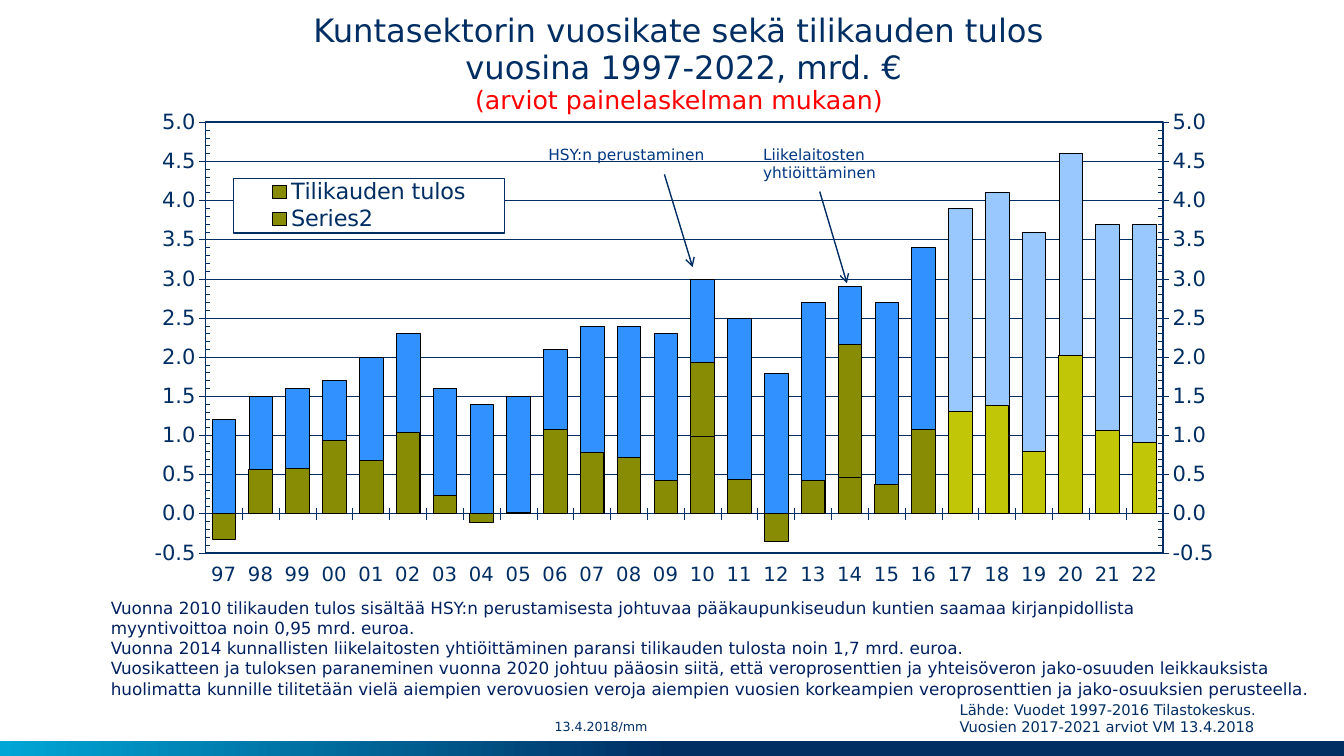
from copy import deepcopy
from lxml import etree
from pptx import Presentation
from pptx.chart.data import CategoryChartData
from pptx.dml.color import RGBColor
from pptx.enum.chart import XL_CHART_TYPE, XL_LEGEND_POSITION, XL_TICK_LABEL_POSITION, XL_TICK_MARK
from pptx.enum.dml import MSO_LINE
from pptx.enum.shapes import MSO_CONNECTOR, MSO_SHAPE
from pptx.enum.text import MSO_ANCHOR, MSO_AUTO_SIZE, PP_ALIGN
from pptx.oxml import parse_xml
from pptx.oxml.ns import qn
from pptx.util import Inches, Pt

NAVY = "002E63"
FONT = "DejaVu Sans"
NS = ('xmlns:c="http://schemas.openxmlformats.org/drawingml/2006/chart" '
      'xmlns:a="http://schemas.openxmlformats.org/drawingml/2006/main"')


def rgb(code):
    return RGBColor.from_string(code)


def write(shape, lines, wrap=True, inset=0.1, align=PP_ALIGN.LEFT, spacing=None):
    """Fill a shape with one paragraph per (text, size, colour) line."""
    frame = shape.text_frame
    frame.word_wrap = wrap
    frame.auto_size = MSO_AUTO_SIZE.SHAPE_TO_FIT_TEXT
    frame.vertical_anchor = MSO_ANCHOR.TOP
    frame.margin_left = frame.margin_right = Inches(inset)
    frame.margin_top = frame.margin_bottom = Inches(inset / 2)
    for i, (text, size, color) in enumerate(lines):
        para = frame.paragraphs[0] if i == 0 else frame.add_paragraph()
        para.alignment = align
        para.line_spacing = spacing
        run = para.add_run()
        run.text = text
        run.font.size = Pt(size)
        run.font.name = FONT
        run.font.color.rgb = rgb(color)


prs = Presentation()
prs.slide_width, prs.slide_height = Inches(13.33), Inches(7.5)
slide = prs.slides.add_slide(prs.slide_layouts[5])
shapes = slide.shapes

# Bottom band
band = shapes.add_shape(MSO_SHAPE.RECTANGLE, 0, Inches(7.35), Inches(13.33), Inches(0.15))
band.shadow.inherit = False
band.line.fill.background()
band.fill.gradient()
band.fill.gradient_angle = 180
for stop, (pos, color) in zip(band.fill.gradient_stops, [(0.5, NAVY), (1, "00A6D6")]):
    stop.position = pos
    stop.color.rgb = rgb(color)

# Chart data
years = [f"{year % 100:02d}" for year in range(1997, 2023)]
margin = [1.2, 1.5, 1.6, 1.7, 2, 2.3, 1.6, 1.4, 1.5, 2.1, 2.4, 2.4, 2.3, 3, 2.5, 1.8,
          2.7, 2.9, 2.7, 3.4, 3.9, 4.1, 3.6, 4.6, 3.7, 3.7]
result = [-0.33, 0.57, 0.58, 0.94, 0.68, 1.04, 0.23, -0.11, 0.01, 1.08, 0.78, 0.72, 0.43,
          0.98, 0.44, -0.36, 0.43, 0.46, 0.37, 1.08, 1.31, 1.38, 0.8, 2.02, 1.06, 0.91]
extra = [{"10": 0.95, "14": 1.7}.get(year) for year in years]
data = CategoryChartData()
data.categories = years
data.add_series("Vuosikate", margin)
data.add_series("", result)
data.add_series("Tilikauden tulos", extra)
chart = shapes.add_chart(XL_CHART_TYPE.COLUMN_CLUSTERED, Inches(1.39), Inches(0.68),
                         Inches(10.79), Inches(5.28), data).chart
chart.has_title = False
chart.font.name = FONT
chart.font.size = Pt(15)
chart.font.color.rgb = rgb(NAVY)

# Columns, with the forecast years in lighter shades
plot = chart.plots[0]
plot.gap_width = 56
plot.vary_by_categories = False
looks = [("3191FF", "98C8FF", 0.25), ("888C04", "C1C606", 0.5), ("888C04", None, 0.5)]
for series, (color, light, width) in zip(plot.series, looks):
    formats = [(series.format, color)]
    if light:
        formats += [(series.points[i].format, light) for i in range(20, 26)]
    for form, shade in formats:
        form.fill.solid()
        form.fill.fore_color.rgb = rgb(shade)
        form.line.color.rgb = rgb("000000")
        form.line.width = Pt(width)
    series.invert_if_negative = False

# Axes
cat, val = chart.category_axis, chart.value_axis
for axis, size in [(cat, 14), (val, 15)]:
    axis.major_tick_mark = XL_TICK_MARK.CROSS
    axis.tick_labels.font.size = Pt(size)
    axis.tick_labels.font.name = FONT
    axis.tick_labels.font.bold = False
    axis.tick_labels.font.color.rgb = rgb(NAVY)
    axis.format.line.color.rgb = rgb(NAVY)
    axis.format.line.width = Pt(0.3)
cat.tick_label_position = XL_TICK_LABEL_POSITION.LOW
val.minimum_scale, val.maximum_scale = -0.5, 5
val.major_unit, val.minor_unit = 0.5, 0.1
val.minor_tick_mark = XL_TICK_MARK.INSIDE
val.tick_labels.number_format = "0.0"
val.tick_labels.number_format_is_linked = False
grid = val.major_gridlines.format.line
grid.color.rgb = rgb(NAVY)
grid.width = Pt(0.25)
grid.dash_style = MSO_LINE.ROUND_DOT

# Legend
chart.has_legend = True
legend = chart.legend
legend.position = XL_LEGEND_POSITION.RIGHT
legend.include_in_layout = False
legend.font.size = Pt(16)
legend.font.name = FONT
legend.font.bold = False
legend.font.color.rgb = rgb(NAVY)

# Result series go to a stacked group on the right axis
area = chart._chartSpace.find(".//" + qn("c:plotArea"))
bars = area.find(qn("c:barChart"))
stack = deepcopy(bars)
bars.addnext(stack)
for ser in bars.findall(qn("c:ser"))[1:]:
    bars.remove(ser)
stack.remove(stack.find(qn("c:ser")))
stack.find(qn("c:grouping")).set("val", "stacked")
chart.plots[1].overlap = 100
unnamed = stack.find(qn("c:ser"))
unnamed.remove(unnamed.find(qn("c:tx")))
left = area.find(qn("c:valAx"))
right, hidden = deepcopy(left), deepcopy(area.find(qn("c:catAx")))
left.addnext(right)
right.addnext(hidden)
right.remove(right.find(qn("c:majorGridlines")))
right.find(qn("c:axPos")).set("val", "r")
right.find(qn("c:crosses")).set("val", "max")
hidden.find(qn("c:delete")).set("val", "1")
for part in (stack, right, hidden):
    for ref in part.findall(qn("c:axId")) + part.findall(qn("c:crossAx")):
        ref.set("val", ref.get("val").replace("-", ""))

# Places and frames of plot and legend
key = legend._element
for part, inner, box in [(area, '<c:layoutTarget val="inner"/>', (0.06, 0.101, 0.88, 0.809)),
                         (key, "", (0.086, 0.206, 0.249, 0.103))]:
    old = part.find(qn("c:layout"))
    if old is not None:
        part.remove(old)
    modes = '<c:xMode val="edge"/><c:yMode val="edge"/>'
    sides = "".join(f'<c:{side} val="{num}"/>' for side, num in zip("xywh", box))
    layout = parse_xml(f"<c:layout {NS}><c:manualLayout>{inner}{modes}{sides}"
                       "</c:manualLayout></c:layout>")
    fill = '<a:solidFill><a:srgbClr val="FFFFFF"/></a:solidFill>' if part is key else "<a:noFill/>"
    width = Pt(0.75) if part is key else Pt(1.25)
    frame = parse_xml(f'<c:spPr {NS}>{fill}<a:ln w="{width}"><a:solidFill>'
                      f'<a:srgbClr val="{NAVY}"/></a:solidFill></a:ln></c:spPr>')
    if part is key:
        key.find(qn("c:legendPos")).addnext(layout)
        key.find(qn("c:overlay")).addnext(frame)
    else:
        area.insert(0, layout)
        area.append(frame)
key.find(qn("c:legendPos")).addnext(parse_xml(
    f'<c:legendEntry {NS}><c:idx val="0"/><c:delete val="1"/></c:legendEntry>'))

# Title
title = shapes.title
title.left, title.top, title.width, title.height = map(Inches, (1.95, 0.13, 9.57, 1.02))
write(title, [("Kuntasektorin vuosikate sekä tilikauden tulos", 23, NAVY),
              (" vuosina 1997-2022, mrd. €", 23, NAVY),
              ("(arviot painelaskelman mukaan)", 18, "FF0000")],
      inset=0, align=PP_ALIGN.CENTER, spacing=0.95)
shapes._spTree.append(title._element)

# Notes, source, date and chart labels
notes = [
    "Vuonna 2010 tilikauden tulos sisältää HSY:n perustamisesta johtuvaa pääkaupunkiseudun "
    "kuntien saamaa kirjanpidollista",
    "myyntivoittoa noin 0,95 mrd. euroa.",
    "Vuonna 2014 kunnallisten liikelaitosten yhtiöittäminen paransi tilikauden tulosta noin "
    "1,7 mrd. euroa.",
    "Vuosikatteen ja tuloksen paraneminen vuonna 2020 johtuu pääosin siitä, että "
    "veroprosenttien ja yhteisöveron jako-osuuden leikkauksista huolimatta kunnille tilitetään "
    "vielä aiempien verovuosien veroja aiempien vuosien korkeampien veroprosenttien ja "
    "jako-osuuksien perusteella."]
source = ["Lähde: Vuodet 1997-2016 Tilastokeskus.", "Vuosien 2017-2021 arviot VM 13.4.2018"]
texts = [((5.5, 7.13, 1.97, 0.16), ["13.4.2018/mm"], 9, NAVY, True, 0),
         ((9.42, 6.9, 3.89, 0.47), source, 10.5, NAVY, True, 0.1),
         ((1, 5.88, 12.21, 1.11), notes, 12, "002060", True, 0.1),
         ((7.47, 1.39, 1.33, 0.47), ["Liikelaitosten", "yhtiöittäminen"], 11, "003882", False, 0.1),
         ((5.34, 1.39, 1.81, 0.29), ["HSY:n perustaminen"], 11, "003882", False, 0.1)]
for spot, lines, size, color, wrap, inset in texts:
    write(shapes.add_textbox(*map(Inches, spot)), [(line, size, color) for line in lines],
          wrap, inset)

# Arrows
for ends in [(8.13, 1.9, 8.4, 2.81), (6.59, 1.73, 6.87, 2.65)]:
    arrow = shapes.add_connector(MSO_CONNECTOR.STRAIGHT, *map(Inches, ends))
    arrow.line.color.rgb = rgb(NAVY)
    arrow.line.width = Pt(1)
    etree.SubElement(arrow.line._get_or_add_ln(), qn("a:tailEnd"), type="arrow")
    etree.SubElement(arrow._element.spPr, qn("a:effectLst"))

prs.save("out.pptx")
